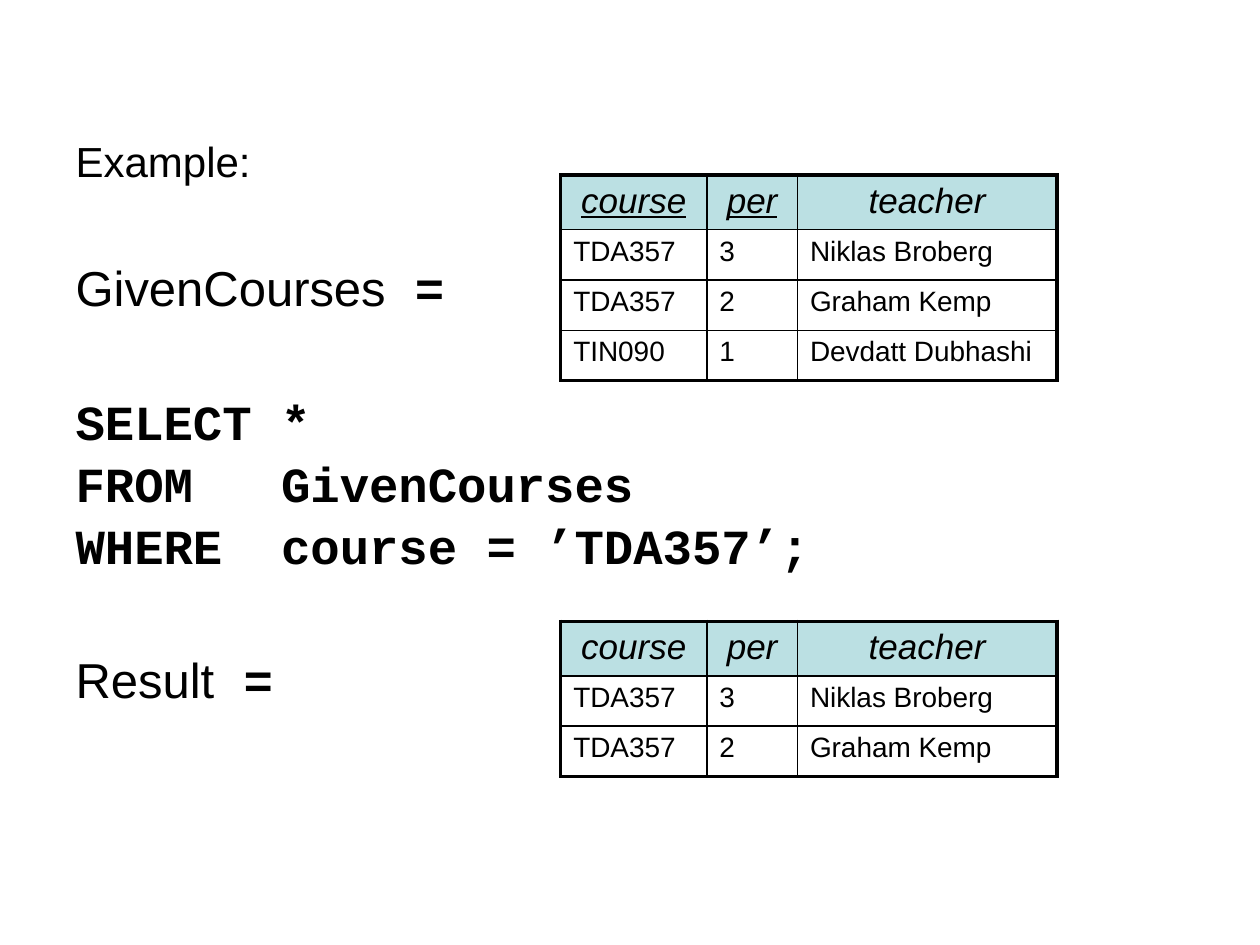
from lxml import etree
from pptx import Presentation
from pptx.dml.color import RGBColor
from pptx.enum import text
from pptx.oxml.ns import qn
from pptx.util import Pt

BLACK = RGBColor(0x00, 0x00, 0x00)
HEADER_FILL = RGBColor(0xBB, 0xE0, 0xE3)
SANS, MONO = "Arial", "Courier New"

TABLE_LEFT = 320.4
COLUMN_WIDTHS = (83.5, 51.8, 148.3)
HEADER_HEIGHT, ROW_HEIGHT = 31.2, 28.8
OUTER_LINE, INNER_LINE = 2.25, 1

HEADINGS = ("course", "per", "teacher")
GIVEN_COURSES = (
    ("TDA357", "3", "Niklas Broberg"),
    ("TDA357", "2", "Graham Kemp"),
    ("TIN090", "1", "Devdatt Dubhashi"),
)
RESULT = [row for row in GIVEN_COURSES if row[0] == "TDA357"]

# Space before, size, sans-serif text, bold monospaced text
BODY_LINES = (
    (0, 24, "Example:", ""),
    (41, 28, "GivenCourses", " ="),
    (43, 28, "", "SELECT *"),
    (1.8, 28, "", "FROM   GivenCourses"),
    (1.8, 28, "", "WHERE  course = ’TDA357’;"),
    (42.8, 28, "Result", " ="),
)


def remove_bullet(paragraph):
    properties = paragraph._p.get_or_add_pPr()
    properties.set("marL", "0")
    properties.set("indent", "0")
    etree.SubElement(properties, qn("a:buNone"))


def add_run(paragraph, content, font_name, bold):
    run = paragraph.add_run()
    run.text = content
    run.font.name = font_name
    run.font.bold = bold


def fill_body(body):
    body.left, body.top, body.width, body.height = Pt(36), Pt(73.8), Pt(648), Pt(408)
    frame = body.text_frame
    frame.auto_size = text.MSO_AUTO_SIZE.NONE
    frame.vertical_anchor = text.MSO_ANCHOR.TOP
    for index, (space, size, plain, code) in enumerate(BODY_LINES):
        paragraph = frame.add_paragraph() if index else frame.paragraphs[0]
        paragraph.space_before = Pt(space)
        paragraph.font.size = Pt(size)
        paragraph.font.color.rgb = BLACK
        remove_bullet(paragraph)
        if plain:
            add_run(paragraph, plain, SANS, False)
        if code:
            add_run(paragraph, code, MONO, True)


def set_borders(cell, widths):
    """Draw the left, right, top and bottom borders, with widths in points."""
    properties = cell._tc.get_or_add_tcPr()
    for index, (side, width) in enumerate(zip("LRTB", widths)):
        line = etree.Element(qn(f"a:ln{side}"), w=str(int(Pt(width))))
        fill = etree.SubElement(line, qn("a:solidFill"))
        etree.SubElement(fill, qn("a:srgbClr"), val=str(BLACK))
        properties.insert(index, line)


def format_cell(cell, content, is_header, underlined):
    if is_header:
        cell.fill.solid()
        cell.fill.fore_color.rgb = HEADER_FILL
    else:
        cell.fill.background()
    cell.text = content
    paragraph = cell.text_frame.paragraphs[0]
    paragraph.alignment = text.PP_ALIGN.CENTER if is_header else text.PP_ALIGN.LEFT
    font = paragraph.font
    font.name = SANS
    font.size = Pt(20 if is_header else 16)
    font.bold = False
    font.italic = is_header
    font.underline = underlined
    font.color.rgb = BLACK


def add_relation(slide, top, records, keys=()):
    """Add a relation as a table, underlining the headings of its key columns."""
    rows = [HEADINGS, *records]
    heights = [HEADER_HEIGHT] + [ROW_HEIGHT] * len(records)
    table = slide.shapes.add_table(
        len(rows), len(HEADINGS), Pt(TABLE_LEFT), Pt(top),
        Pt(sum(COLUMN_WIDTHS)), Pt(sum(heights))).table
    table.first_row = table.horz_banding = False
    for column, width in zip(table.columns, COLUMN_WIDTHS):
        column.width = Pt(width)
    last_row, last_column = len(rows) - 1, len(HEADINGS) - 1
    for r, values in enumerate(rows):
        table.rows[r].height = Pt(heights[r])
        for c, value in enumerate(values):
            cell = table.cell(r, c)
            format_cell(cell, value, r == 0, r == 0 and value in keys)
            on_edge = (c == 0, c == last_column, r == 0, r == last_row)
            set_borders(cell, [OUTER_LINE if edge else INNER_LINE for edge in on_edge])


def main():
    presentation = Presentation()
    presentation.slide_width, presentation.slide_height = Pt(720), Pt(540)
    slide = presentation.slides.add_slide(
        presentation.slide_layouts.get_by_name("Title and Content"))
    title = slide.shapes.title
    title.element.getparent().remove(title.element)
    fill_body(slide.placeholders[1])
    add_relation(slide, 100, GIVEN_COURSES, keys=("course", "per"))
    add_relation(slide, 355, RESULT)
    presentation.save("out.pptx")


if __name__ == "__main__":
    main()
